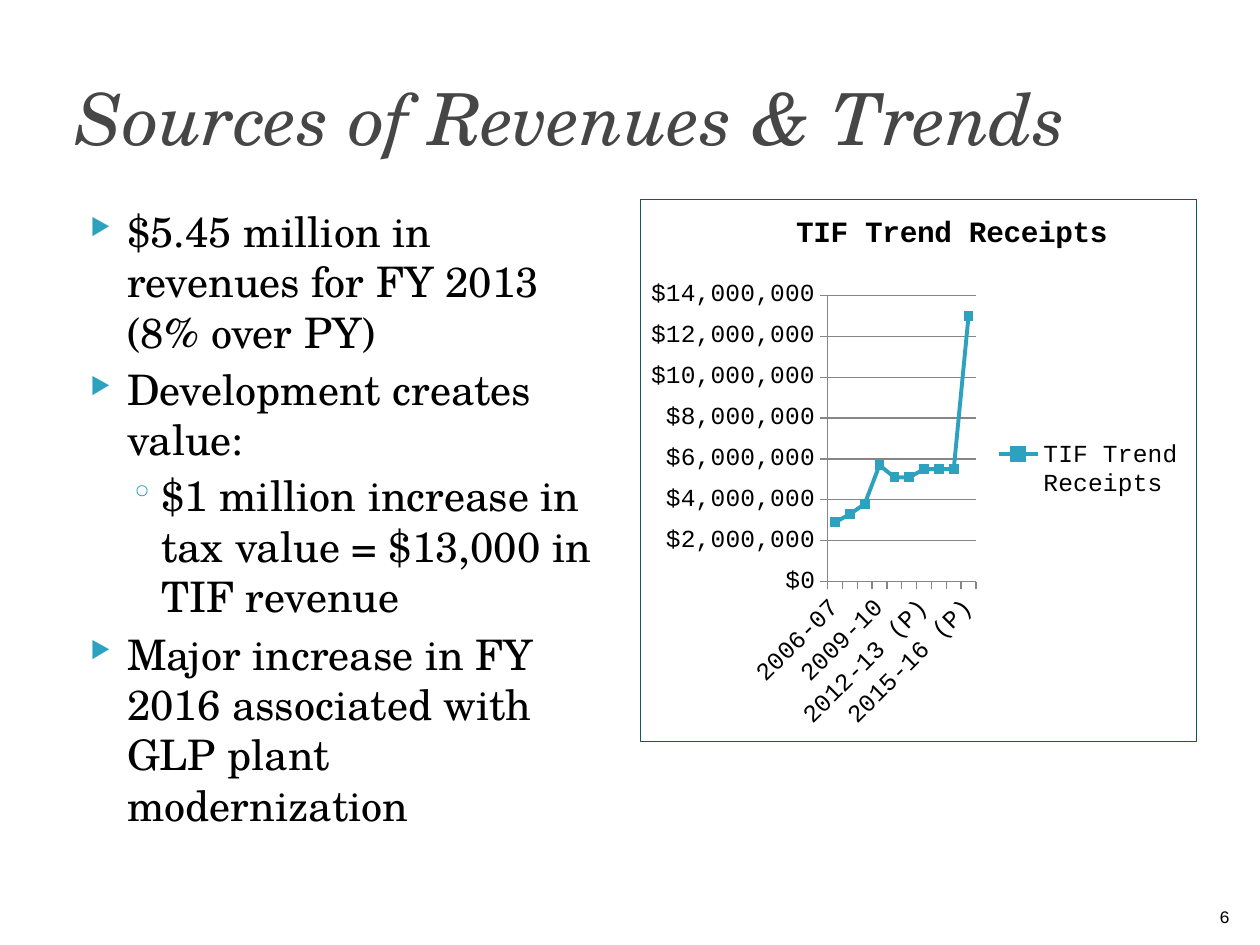
from lxml import etree
from pptx import Presentation, util as u
from pptx.chart.data import CategoryChartData
from pptx.dml.color import RGBColor
from pptx.enum import chart as kinds, text
from pptx.oxml import parse_xml
from pptx.oxml.ns import nsdecls, qn

COLUMNS, ROWS = 100, 75
SERIF, MONO = "TeX Gyre Schola", "Courier New"
BLACK, WHITE, GREY, TEAL = "000000", "FFFFFF", "464646", "2DA2BF"

BULLETS = [
    (0, "$5.45 million in revenues for FY 2013 (8% over PY)"),
    (0, "Development creates value:"),
    (1, "$1 million increase in tax value = $13,000 in TIF revenue"),
    (0, "Major increase in FY 2016 associated with GLP plant modernization"),
]
LEVELS = [
    dict(margin=0.41, indent=-0.29, before=4, mark="▶", size=55),
    dict(margin=0.68, indent=-0.25, before=3.2, mark="◦", size=75),
]
RECEIPTS = {
    "2006-07": 2900000, "2007-08": 3300000, "2008-09": 3800000,
    "2009-10": 5700000, "2010-11 ": 5100000, "2011-12": 5100000,
    "2012-13 (P)": 5500000, "2013-14 (P)": 5500000,
    "2014-15 (P)": 5500000, "2015-16 (P)": 13000000,
}


def color(value):
    return RGBColor.from_string(value)


def grid_box(deck, left, top, width, height):
    column, row = deck.slide_width / COLUMNS, deck.slide_height / ROWS
    return [u.Emu(round(n)) for n in
            (left * column, top * row, width * column, height * row)]


def style(font, name, size, fill=BLACK):
    font.name, font.size = name, u.Pt(size)
    font.color.rgb = color(fill)


def add_frame(page, box, anchor):
    shape = page.shapes.add_textbox(*box)
    frame = shape.text_frame
    frame.word_wrap = True
    frame.vertical_anchor = anchor
    return shape, frame


def add_span(para, words, name, size, fill=BLACK):
    span = para.add_run()
    span.text = words
    style(span.font, name, size, fill)
    return span


def add_title(page, box):
    _, frame = add_frame(page, box, text.MSO_ANCHOR.MIDDLE)
    span = add_span(frame.paragraphs[0], "Sources of Revenues & Trends", SERIF, 41, GREY)
    span.font.italic = True


def set_bullet(para, level):
    props = para._p.get_or_add_pPr()
    props.set("marL", str(u.Inches(level["margin"])))
    props.set("indent", str(u.Inches(level["indent"])))
    tint = etree.SubElement(props, qn("a:buClr"))
    etree.SubElement(tint, qn("a:srgbClr"), val=TEAL)
    etree.SubElement(props, qn("a:buSzPct"), val=str(level["size"] * 1000))
    etree.SubElement(props, qn("a:buChar"), char=level["mark"])


def add_bullets(page, box):
    shape, frame = add_frame(page, box, text.MSO_ANCHOR.TOP)
    shape.fill.solid()
    shape.fill.fore_color.rgb = color(WHITE)
    for index, (depth, words) in enumerate(BULLETS):
        para = frame.add_paragraph() if index else frame.paragraphs[0]
        para.level = depth
        set_bullet(para, LEVELS[depth])
        para.space_before = u.Pt(LEVELS[depth]["before"] if index else 0)
        add_span(para, words, SERIF, 24)


def set_layout(parent, position, **shares):
    for old in parent.findall(qn("c:layout")):
        parent.remove(old)
    modes = "".join(f'<c:{side}Mode val="edge"/>' for side in "xy")
    sizes = "".join(f'<c:{key} val="{share}"/>' for key, share in shares.items())
    parent.insert(position, parse_xml(
        f'<c:layout {nsdecls("c")}><c:manualLayout>'
        f'{modes}{sizes}</c:manualLayout></c:layout>'))


def style_axes(chart):
    values, years = chart.value_axis, chart.category_axis
    values.minimum_scale, values.maximum_scale = 0, 14000000
    values.major_unit = 2000000
    values.tick_labels.number_format = '"$"#,##0'
    values.tick_labels.number_format_is_linked = False
    values.has_major_gridlines = True
    for axis in (values, years):
        axis.major_tick_mark = kinds.XL_TICK_MARK.OUTSIDE
        style(axis.tick_labels.font, MONO, 14)
    for line in (values.format.line, years.format.line, values.major_gridlines.format.line):
        line.color.rgb = color("868686")
        line.width = u.Pt(0.75)
    years._element.find(qn("c:txPr")).find(qn("a:bodyPr")).set("rot", str(-45 * 60000))
    skip = parse_xml(f'<c:tickLblSkip {nsdecls("c")} val="4"/>')
    years._element.find(qn("c:noMultiLvlLbl")).addprevious(skip)


def style_series(series):
    series.smooth = False
    series.format.line.color.rgb = color(TEAL)
    series.format.line.width = u.Pt(2.25)
    marker = series.marker
    marker.style, marker.size = kinds.XL_MARKER_STYLE.SQUARE, 5
    marker.format.fill.solid()
    marker.format.fill.fore_color.rgb = color(TEAL)
    marker.format.line.color.rgb = color(TEAL)


def add_receipts_chart(page, box):
    data = CategoryChartData()
    data.categories = list(RECEIPTS)
    data.add_series("TIF Trend Receipts", list(RECEIPTS.values()))
    chart = page.shapes.add_chart(kinds.XL_CHART_TYPE.LINE_MARKERS, *box, data).chart
    style(chart.font, MONO, 14)
    chart.has_title = True
    para = chart.chart_title.text_frame.paragraphs[0]
    add_span(para, "TIF Trend Receipts", MONO, 16.8).font.bold = True
    chart.has_legend = True
    chart.legend.position = kinds.XL_LEGEND_POSITION.RIGHT
    chart.legend.include_in_layout = False
    style(chart.legend.font, MONO, 14)
    style_axes(chart)
    plot = chart.plots[0]
    plot.vary_by_categories = False
    style_series(plot.series[0])
    root = chart._chartSpace.find(qn("c:chart"))
    set_layout(root.find(qn("c:title")), 1, x=0.27, y=0.02)
    set_layout(root.find(qn("c:plotArea")), 0, x=0.02, y=0.15, w=0.59, h=0.83)
    root.addnext(parse_xml(
        f'<c:spPr {nsdecls("c", "a")}><a:noFill/><a:ln w="{u.Pt(0.75)}"><a:solidFill>'
        '<a:srgbClr val="105766"/></a:solidFill></a:ln></c:spPr>'))


def add_page_number(page, box):
    _, frame = add_frame(page, box, text.MSO_ANCHOR.BOTTOM)
    para = frame.paragraphs[0]
    para.alignment = text.PP_ALIGN.RIGHT
    add_span(para, "6", MONO, 10)


def main():
    deck = Presentation()
    deck.slide_width, deck.slide_height = u.Inches(10), u.Inches(7.5)
    page = deck.slides.add_slide(deck.slide_layouts[6])
    add_title(page, grid_box(deck, 5, 3, 90, 12.5))
    add_bullets(page, grid_box(deck, 5, 15.8, 44.2, 52.5))
    add_page_number(page, grid_box(deck, 94.6, 70.1, 4, 4))
    add_receipts_chart(page, grid_box(deck, 50.8, 15.8, 44.2, 43.1))
    deck.save("out.pptx")


if __name__ == "__main__":
    main()
